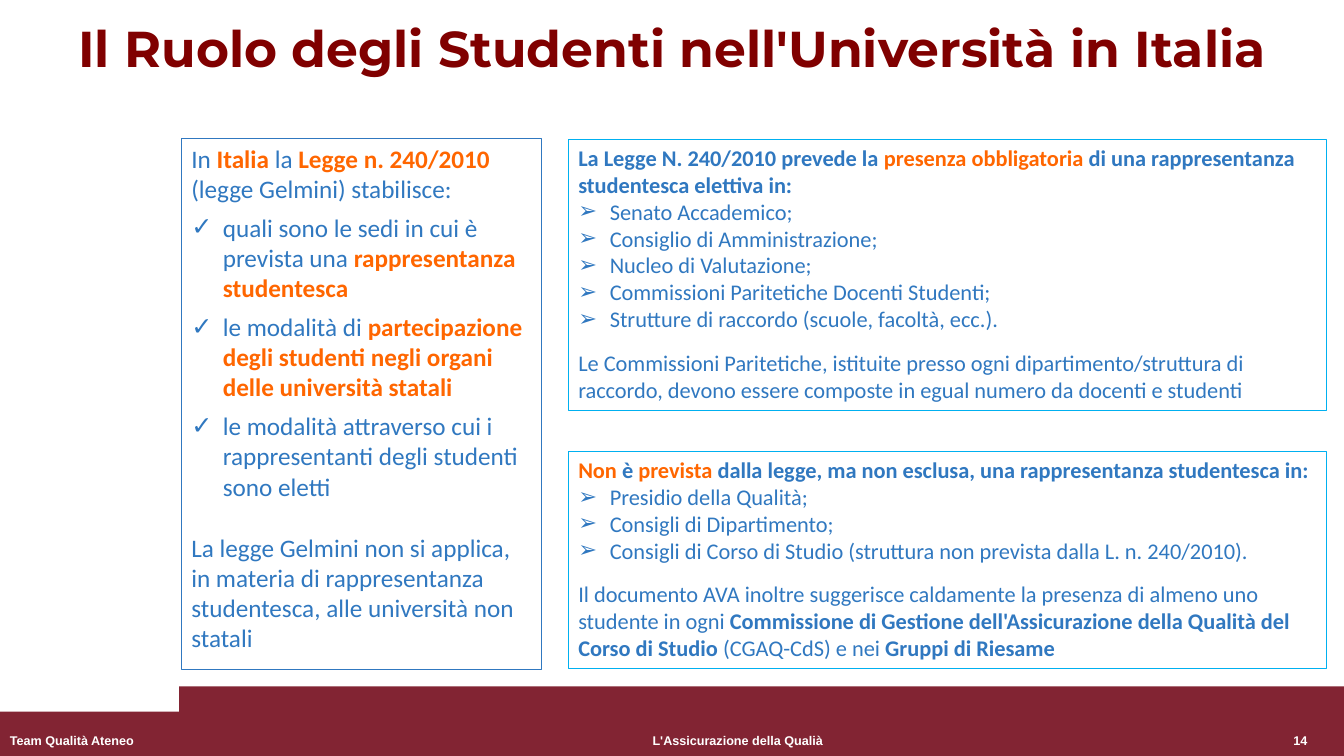
from dataclasses import dataclass

import pptx
import pptx.util
from pptx.dml.color import RGBColor
from pptx.enum.shapes import MSO_SHAPE
from pptx.enum.text import MSO_ANCHOR, MSO_AUTO_SIZE, PP_ALIGN
from pptx.oxml.ns import qn
from lxml import etree

Pt = pptx.util.Pt

WHITE = RGBColor(0xFF, 0xFF, 0xFF)
MAROON = RGBColor(0x80, 0x00, 0x00)
WINE = RGBColor(0x82, 0x24, 0x33)
BLUE = RGBColor(0x30, 0x78, 0xC0)
CYAN = RGBColor(0x00, 0xB0, 0xF0)
ORANGE = RGBColor(0xFF, 0x66, 0x00)
BULLET_INDENT = 22.5


@dataclass(frozen=True)
class Run:
    text: str
    bold: bool = False
    color: RGBColor = BLUE


@dataclass(frozen=True)
class Para:
    runs: tuple[Run, ...]
    bullet: str = ""
    before: float = 0


@dataclass(frozen=True)
class Panel:
    left: float
    top: float
    width: float
    height: float
    line: RGBColor
    size: float
    paras: tuple[Para, ...]


@dataclass(frozen=True)
class Footer:
    text: str
    left: float
    width: float
    align: PP_ALIGN


def key(text: str) -> Run:
    """Highlighted run: bold orange."""
    return Run(text, True, ORANGE)


def arrows(*items: str) -> tuple[Para, ...]:
    return tuple(Para((Run(item),), "➢") for item in items)


LAW = Panel(129.6, 98.8, 257, 379.4, BLUE, 18, (
    Para((Run("In "), key("Italia "), Run("la "), key("Legge n. 240/2010 "),
          Run("(legge Gelmini) stabilisce:"))),
    Para((Run("quali sono le sedi in cui è prevista una "),
          key("rappresentanza studentesca")), "✓", 6),
    Para((Run("le modalità di "),
          key("partecipazione degli studenti negli organi delle università statali")),
         "✓", 6),
    Para((Run("le modalità attraverso cui i rappresentanti degli studenti "
              "sono eletti"),), "✓", 6),
    Para((Run("La legge Gelmini non si applica, in materia di rappresentanza "
              "studentesca, alle università non statali"),), before=22),
))
REQUIRED = Panel(406, 99.4, 541.6, 193.8, CYAN, 16, (
    Para((Run("La Legge N. 240/2010 prevede la ", True), key("presenza obbligatoria "),
          Run("di una rappresentanza studentesca elettiva in:", True))),
    *arrows("Senato Accademico;", "Consiglio di Amministrazione;",
            "Nucleo di Valutazione;", "Commissioni Paritetiche Docenti Studenti;",
            "Strutture di raccordo (scuole, facoltà, ecc.)."),
    Para((Run("Le Commissioni Paritetiche, istituite presso ogni "
              "dipartimento/struttura di raccordo, devono essere composte in egual "
              "numero da docenti e studenti"),), before=12),
))
OPTIONAL = Panel(406, 322.3, 541.6, 155, CYAN, 16, (
    Para((key("Non "), Run("è ", True), key("prevista "),
          Run("dalla legge, ma non esclusa, una rappresentanza studentesca in:", True))),
    *arrows("Presidio della Qualità;", "Consigli di Dipartimento;",
            "Consigli di Corso di Studio (struttura non prevista dalla L. n. 240/2010)."),
    Para((Run("Il documento AVA inoltre suggerisce caldamente la presenza di almeno "
              "uno studente in ogni "),
          Run("Commissione di Gestione dell'Assicurazione della Qualità del Corso "
              "di Studio", True),
          Run(" (CGAQ-CdS) e nei"), Run(" Gruppi di Riesame", True)), before=12),
))
FOOTERS = (
    Footer("Team Qualità Ateneo", 0, 162.7, PP_ALIGN.LEFT),
    Footer("L'Assicurazione della Qualià", 224.6, 604.8, PP_ALIGN.CENTER),
    Footer("14", 887, 54, PP_ALIGN.RIGHT),
)


def add_run(p, text: str, *, font: str, size: float, color: RGBColor,
            bold: bool = False) -> None:
    r = p.add_run()
    r.text = text
    r.font.name = font
    r.font.size = Pt(size)
    r.font.bold = bold
    r.font.color.rgb = color


def set_bullet(p, char: str) -> None:
    pPr = p._p.get_or_add_pPr()
    pPr.set("marL", str(Pt(BULLET_INDENT)))
    pPr.set("indent", str(-Pt(BULLET_INDENT)))
    etree.SubElement(pPr, qn("a:buFont")).set("typeface", "Arial")
    etree.SubElement(pPr, qn("a:buChar")).set("char", char)


def add_band(s, left: float, top: float, width: float, height: float) -> None:
    sp = s.shapes.add_shape(MSO_SHAPE.RECTANGLE, Pt(left), Pt(top), Pt(width), Pt(height))
    sp.shadow.inherit = False
    sp.fill.solid()
    sp.fill.fore_color.rgb = WINE
    sp.line.fill.background()


def set_title(s, text: str) -> None:
    sp = s.shapes.title
    sp.left, sp.top, sp.width, sp.height = Pt(0), Pt(0), Pt(960), Pt(67.7)
    tf = sp.text_frame
    tf.auto_size = MSO_AUTO_SIZE.NONE
    tf.vertical_anchor = MSO_ANCHOR.MIDDLE
    p = tf.paragraphs[0]
    p.alignment = PP_ALIGN.CENTER
    add_run(p, text, font="Montserrat", size=36, color=MAROON, bold=True)


def add_footer(s, footer: Footer) -> None:
    sp = s.shapes.add_textbox(Pt(footer.left), Pt(519.8), Pt(footer.width), Pt(20.2))
    tf = sp.text_frame
    tf.word_wrap = True
    p = tf.paragraphs[0]
    p.alignment = footer.align
    add_run(p, footer.text, font="Arial", size=9, color=WHITE, bold=True)


def add_panel(s, panel: Panel) -> None:
    sp = s.shapes.add_textbox(Pt(panel.left), Pt(panel.top), Pt(panel.width),
                              Pt(panel.height))
    sp.line.color.rgb = panel.line
    sp.line.width = Pt(0.75)
    tf = sp.text_frame
    tf.word_wrap = True
    tf.auto_size = MSO_AUTO_SIZE.SHAPE_TO_FIT_TEXT
    for i, para in enumerate(panel.paras):
        p = tf.add_paragraph() if i else tf.paragraphs[0]
        p.space_before = Pt(para.before)
        if para.bullet:
            set_bullet(p, para.bullet)
        for run in para.runs:
            add_run(p, run.text, font="Calibri", size=panel.size, color=run.color,
                    bold=run.bold)


def main() -> None:
    prs = pptx.Presentation()
    prs.slide_width, prs.slide_height = Pt(960), Pt(540)
    s = prs.slides.add_slide(prs.slide_layouts[5])
    add_band(s, 0, 508.3, 960, 31.7)
    add_band(s, 128, 490.3, 832, 49.7)
    set_title(s, "Il Ruolo degli Studenti nell'Università in Italia")
    for footer in FOOTERS:
        add_footer(s, footer)
    for panel in (LAW, REQUIRED, OPTIONAL):
        add_panel(s, panel)
    prs.save("out.pptx")


if __name__ == "__main__":
    main()
